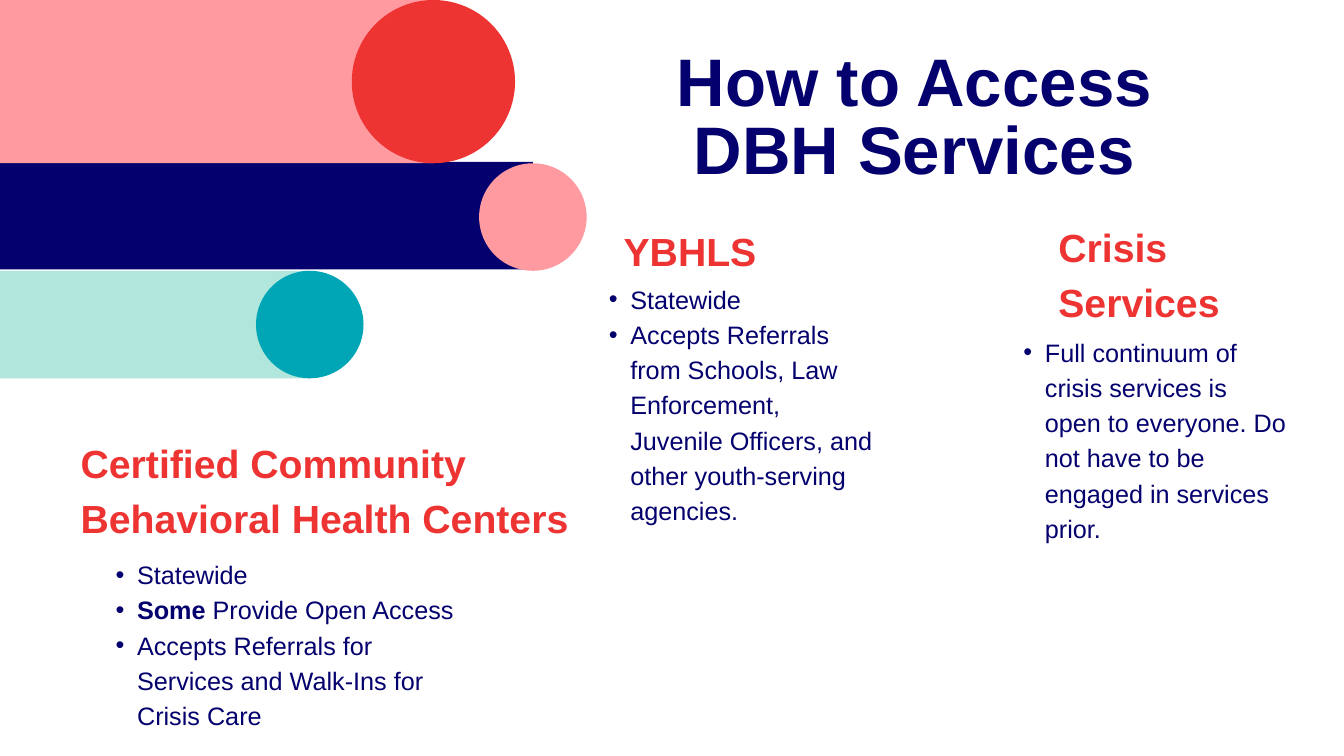
from lxml import etree
from pptx import Presentation
from pptx.dml.color import RGBColor
from pptx.enum.shapes import MSO_SHAPE
from pptx.enum.text import PP_ALIGN
from pptx.oxml.ns import qn
from pptx.util import Inches, Pt

RECTANGLE = MSO_SHAPE.RECTANGLE
OVAL = MSO_SHAPE.OVAL
LEFT = PP_ALIGN.LEFT
CENTER = PP_ALIGN.CENTER

NAVY = RGBColor(0x04, 0x00, 0x6D)
RED = RGBColor(0xED, 0x34, 0x32)
PINK = RGBColor(0xFF, 0x9A, 0xA1)
MINT = RGBColor(0xB0, 0xE6, 0xDB)
TEAL = RGBColor(0x00, 0xA6, 0xB6)


class SlideBuilder:
    font = "Arial"

    def __init__(self, slide):
        self.slide = slide

    def shape(self, kind, left, top, width, height, color):
        shape = self.slide.shapes.add_shape(
            kind, Inches(left), Inches(top), Inches(width), Inches(height))
        shape.shadow.inherit = False
        shape.fill.solid()
        shape.fill.fore_color.rgb = color
        shape.line.fill.background()

    def capped_bar(self, left, top, right, height, circle_top, colors):
        bar_color, circle_color = colors
        self.shape(RECTANGLE, left, top, right - left, height, bar_color)
        self.shape(OVAL, right - height / 2, circle_top, height, height, circle_color)

    def text_frame(self, left, top, width, height):
        box = self.slide.shapes.add_textbox(
            Inches(left), Inches(top), Inches(width), Inches(height))
        frame = box.text_frame
        frame.word_wrap = True
        frame.margin_left = frame.margin_top = 0
        frame.margin_right = frame.margin_bottom = 0
        return frame

    def span(self, para, text, size, color, bold):
        span = para.add_run()
        span.text = text
        span.font.name = self.font
        span.font.size = Pt(size)
        span.font.color.rgb = color
        span.font.bold = bold

    def heading(self, text, left, top, width, height,
                size=42, spacing=58.8, color=RED, align=LEFT):
        para = self.text_frame(left, top, width, height).paragraphs[0]
        para.alignment = align
        para.line_spacing = Pt(spacing)
        self.span(para, text, size, color, True)

    def bullets(self, items, left, top, width, height):
        frame = self.text_frame(left, top, width, height)
        for index, item in enumerate(items):
            para = frame.add_paragraph() if index else frame.paragraphs[0]
            para.level = 1
            para.line_spacing = Pt(37.8)
            properties = para._p.get_or_add_pPr()
            properties.set("marL", str(Inches(0.64)))
            properties.set("indent", str(Inches(-0.32)))
            etree.SubElement(properties, qn("a:buFont")).set("typeface", self.font)
            etree.SubElement(properties, qn("a:buChar")).set("char", "•")
            for text, bold in item:
                self.span(para, text, 27, NAVY, bold)


def main():
    deck = Presentation()
    deck.slide_width = Inches(20)
    deck.slide_height = Inches(11.25)
    page = SlideBuilder(deck.slides.add_slide(deck.slide_layouts[6]))

    page.capped_bar(-0.01, 2.41, 7.93, 1.6, 2.43, (NAVY, PINK))
    page.capped_bar(0, 4.03, 4.61, 1.6, 4.03, (MINT, TEAL))
    page.capped_bar(0, 0, 6.45, 2.43, 0, (PINK, RED))

    page.heading("How to Access DBH Services", 9.08, 0.79, 9.05, 2.06,
                 size=72, spacing=72, color=NAVY, align=CENTER)
    page.heading("Certified Community Behavioral Health Centers", 1.2, 6.42, 8.07, 1.6)
    page.heading("YBHLS", 9.28, 3.27, 3.27, 0.79)
    page.heading("Crisis Services", 15.75, 3.21, 3.13, 1.6)

    page.bullets([
        [("Full continuum of crisis services is open to everyone. "
          "Do not have to be engaged in services prior.", False)],
    ], 14.91, 4.94, 4.25, 2.58)
    page.bullets([
        [("Statewide", False)],
        [("Some ", True), ("Provide Open Access", False)],
        [("Accepts Referrals for Services and Walk-Ins for Crisis Care", False)],
    ], 1.4, 8.25, 5.5, 2.58)
    page.bullets([
        [("Statewide", False)],
        [("Accepts Referrals from Schools, Law Enforcement, Juvenile Officers, "
          "and other youth-serving agencies.", False)],
    ], 8.74, 4.15, 4.25, 3.62)

    deck.save("out.pptx")


if __name__ == "__main__":
    main()
